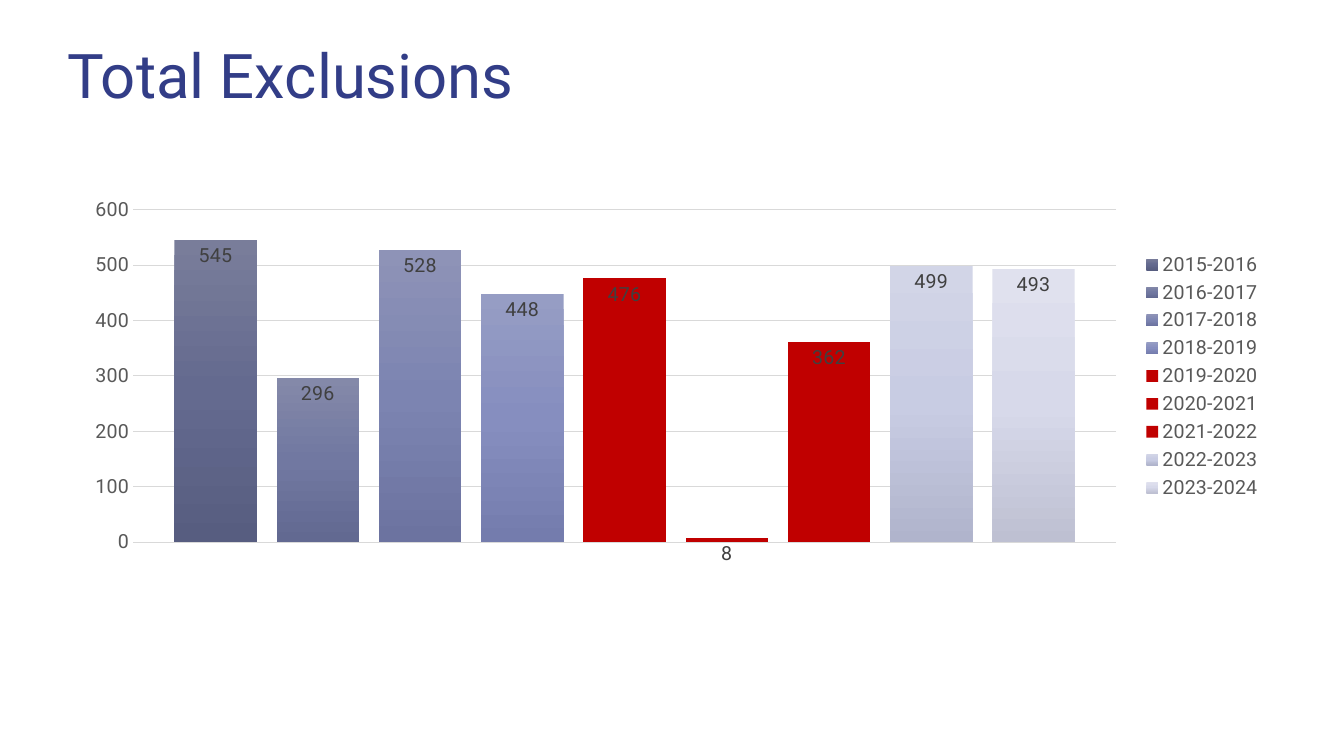
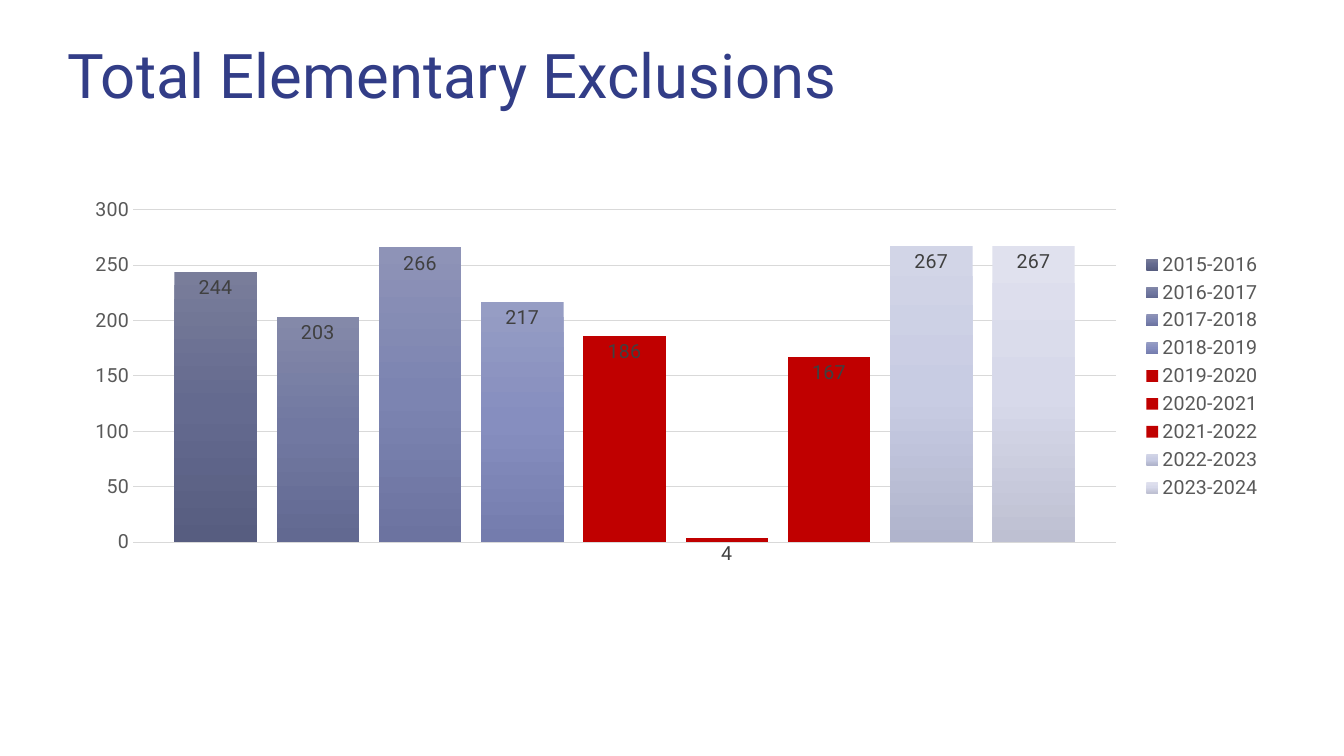
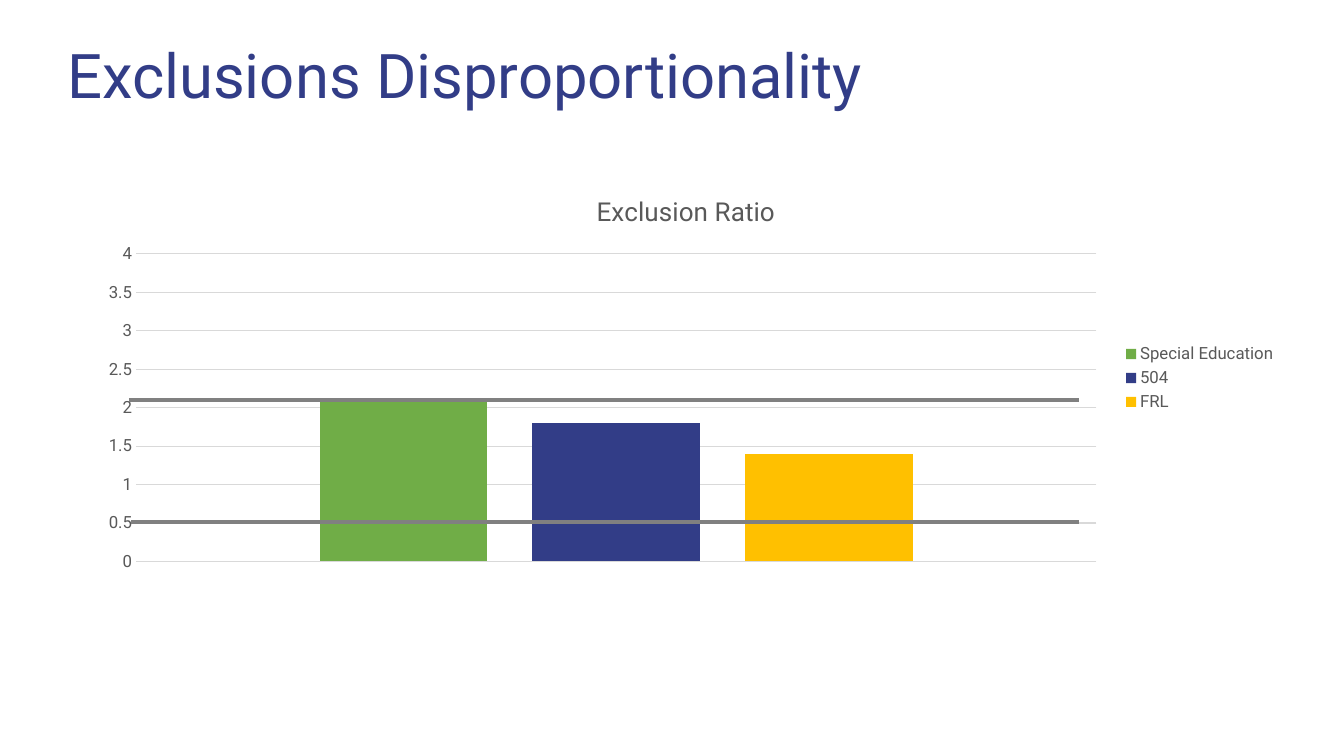
import pptx
import pptx.chart.data
import pptx.dml.color
import pptx.enum.chart
import pptx.enum.shapes
import pptx.enum.text
import pptx.oxml
import pptx.oxml.ns
import pptx.util

Pt = pptx.util.Pt
RGBColor = pptx.dml.color.RGBColor

NAVY = RGBColor(0x32, 0x3D, 0x87)
GREEN = RGBColor(0x70, 0xAD, 0x47)
GOLD = RGBColor(0xFF, 0xC0, 0x00)
RED = RGBColor(0xC0, 0x00, 0x00)
BLACK = RGBColor(0x00, 0x00, 0x00)
LABEL_GREY = RGBColor(0x40, 0x40, 0x40)
TEXT_GREY = RGBColor(0x59, 0x59, 0x59)
LINE_GREY = RGBColor(0x80, 0x80, 0x80)
GRID_GREY = RGBColor(0xD9, 0xD9, 0xD9)

FONT = "Roboto"

# Each year has one flat colour or the top, middle and bottom of a gradient.
YEAR_FILLS = {
    "2015-2016": ("797D9A", "646A8F", "575D80"),
    "2016-2017": ("8489A9", "7178A1", "626991"),
    "2017-2018": ("8E93B7", "7C84B1", "6C73A0"),
    "2018-2019": ("969DC4", "868EBF", "747CAD"),
    "2019-2020": RED,
    "2020-2021": RED,
    "2021-2022": RED,
    "2022-2023": ("D2D5E7", "C8CCE3", "B0B4CC"),
    "2023-2024": ("E0E1EE", "D7D9EA", "BEC0D2"),
}
GROUP_FILLS = {"Special Education": GREEN, "504": NAVY, "FRL": GOLD}

YEARLY_SLIDES = {
    "Total Exclusions": (545, 296, 528, 448, 476, 8, 362, 499, 493),
    "Total Elementary Exclusions": (244, 203, 266, 217, 186, 4, 167, 267, 267),
}
GROUP_RATIOS = (2.1, 1.8, 1.4)


def set_attributes(target, values):
    for name, value in values.items():
        setattr(target, name, value)


def style_font(font, size, color):
    set_attributes(font, {"name": FONT, "size": Pt(size), "bold": False})
    font.color.rgb = color


def add_titled_slide(presentation, title):
    slide = presentation.slides.add_slide(presentation.slide_layouts[6])
    box = slide.shapes.add_textbox(Pt(48), Pt(28.8), Pt(898), Pt(54.7))
    frame = box.text_frame
    set_attributes(frame, {
        "word_wrap": True,
        "vertical_anchor": pptx.enum.text.MSO_ANCHOR.MIDDLE,
        "margin_left": 0, "margin_top": 0, "margin_right": 0, "margin_bottom": 0,
    })
    paragraph = frame.paragraphs[0]
    paragraph.text = title
    paragraph.line_spacing = 0.9
    style_font(paragraph.runs[0].font, 44, NAVY)
    return slide


def fill_series(series, fill):
    """Fill with one colour, or with a gradient when given a tuple of stops."""
    if isinstance(fill, RGBColor):
        series.format.fill.solid()
        series.format.fill.fore_color.rgb = fill
        return
    stops = "".join(
        f'<a:gs pos="{index * 50000}"><a:srgbClr val="{color}"/></a:gs>'
        for index, color in enumerate(fill))
    gradient = pptx.oxml.parse_xml(
        f'<a:gradFill {pptx.oxml.ns.nsdecls("a")} rotWithShape="1">'
        f'<a:gsLst>{stops}</a:gsLst><a:lin ang="5400000" scaled="0"/></a:gradFill>')
    series.format.fill.background()
    properties = series.format.fill._xPr
    properties.replace(properties.find(pptx.oxml.ns.qn("a:noFill")), gradient)


def style_value_axis(axis, size, maximum):
    set_attributes(axis, {
        "minimum_scale": 0,
        "maximum_scale": maximum,
        "major_tick_mark": pptx.enum.chart.XL_TICK_MARK.NONE,
        "minor_tick_mark": pptx.enum.chart.XL_TICK_MARK.NONE,
        "has_major_gridlines": True,
    })
    axis.format.line.fill.background()
    style_font(axis.tick_labels.font, size, TEXT_GREY)
    grid = axis.major_gridlines.format.line
    grid.width = Pt(0.75)
    grid.color.rgb = GRID_GREY


def add_column_chart(slide, area, fills, values, size, gap, overlap, maximum=None):
    """Draw one column per series, named and coloured by the fills."""
    data = pptx.chart.data.CategoryChartData()
    data.categories = ["1"]
    for name, value in zip(fills, values):
        data.add_series(name, [value])
    chart = slide.shapes.add_chart(
        pptx.enum.chart.XL_CHART_TYPE.COLUMN_CLUSTERED,
        *(Pt(length) for length in area), data).chart
    style_font(chart.font, size, BLACK)
    set_attributes(chart, {"has_title": False, "has_legend": True})
    set_attributes(chart.legend, {
        "position": pptx.enum.chart.XL_LEGEND_POSITION.RIGHT,
        "include_in_layout": False,
    })
    style_font(chart.legend.font, size, TEXT_GREY)
    chart.category_axis.visible = False
    style_value_axis(chart.value_axis, size, maximum)
    plot = chart.plots[0]
    set_attributes(plot, {
        "gap_width": gap, "overlap": overlap, "vary_by_categories": False})
    for series, fill in zip(plot.series, fills.values()):
        series.invert_if_negative = False
        fill_series(series, fill)
    return chart


def add_value_labels(chart, size):
    for series in chart.plots[0].series:
        labels = series.data_labels
        set_attributes(labels, {
            "show_value": True,
            "position": pptx.enum.chart.XL_LABEL_POSITION.INSIDE_END,
        })
        style_font(labels.font, size, LABEL_GREY)


def add_chart_title(chart, text):
    chart.has_title = True
    chart.chart_title.include_in_layout = False
    paragraph = chart.chart_title.text_frame.paragraphs[0]
    paragraph.text = text
    style_font(paragraph.runs[0].font, 18.6, TEXT_GREY)


def add_threshold_line(slide, left, right, y):
    line = slide.shapes.add_connector(
        pptx.enum.shapes.MSO_CONNECTOR.STRAIGHT, Pt(left), Pt(y), Pt(right), Pt(y))
    line.line.width = Pt(3)
    line.line.color.rgb = LINE_GREY
    line._element.spPr.append(pptx.oxml.parse_xml(
        f'<a:effectLst {pptx.oxml.ns.nsdecls("a")}/>'))


def main():
    presentation = pptx.Presentation()
    set_attributes(presentation, {"slide_width": Pt(960), "slide_height": Pt(540)})

    for title, counts in YEARLY_SLIDES.items():
        slide = add_titled_slide(presentation, title)
        chart = add_column_chart(slide, (51, 136, 858, 268), YEAR_FILLS, counts,
                                 size=14, gap=100, overlap=-24)
        add_value_labels(chart, 14)

    slide = add_titled_slide(presentation, "Exclusions Disproportionality")
    chart = add_column_chart(slide, (60.5, 126, 859, 288), GROUP_FILLS, GROUP_RATIOS,
                             size=12, gap=219, overlap=-27, maximum=4)
    add_chart_title(chart, "Exclusion Ratio")
    add_threshold_line(slide, 92, 771, 285.8)
    add_threshold_line(slide, 93.6, 771, 373)

    presentation.save("out.pptx")


if __name__ == "__main__":
    main()
